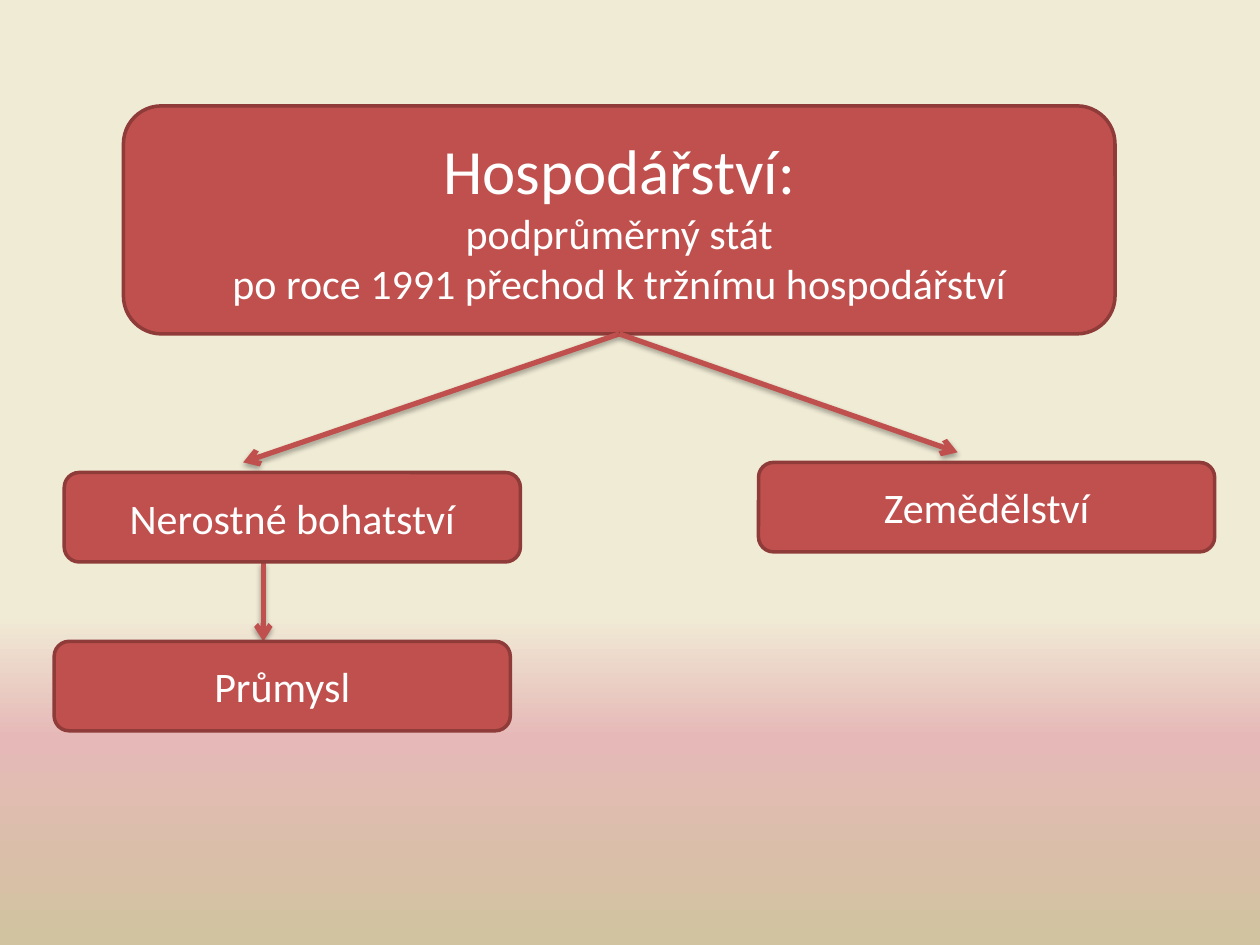
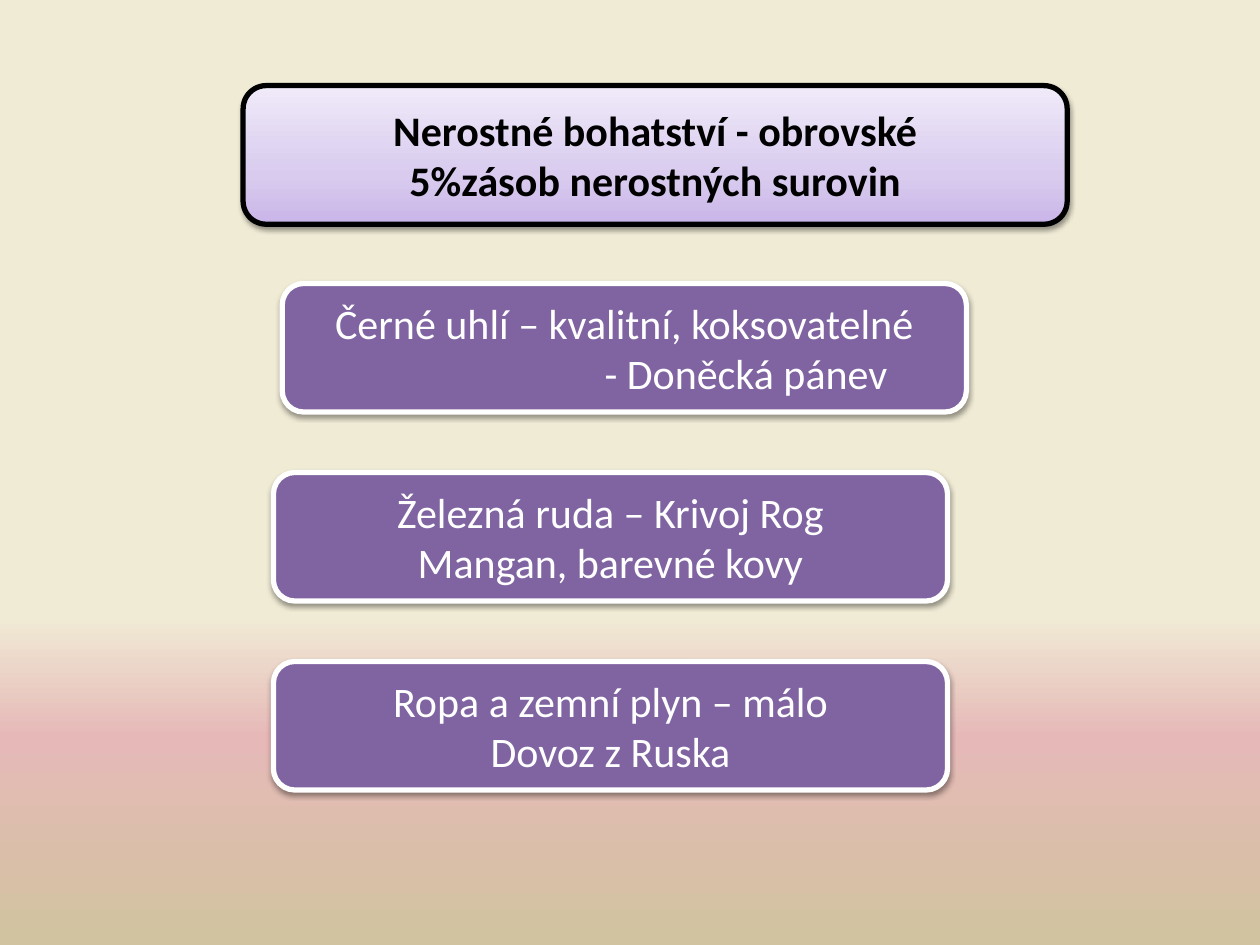
from lxml import etree
from pptx import Presentation
from pptx.dml.color import RGBColor
from pptx.enum.shapes import MSO_CONNECTOR as Connector, MSO_SHAPE as Shape
from pptx.enum.text import MSO_ANCHOR as Anchor, PP_ALIGN as Align
from pptx.oxml.ns import qn
from pptx.util import Inches, Pt

RED = RGBColor(0xC0, 0x50, 0x4D)
DARK_RED = RGBColor(0x8E, 0x3B, 0x39)
PURPLE = RGBColor(0x80, 0x64, 0xA2)
WHITE = RGBColor(0xFF, 0xFF, 0xFF)
BLACK = RGBColor(0x00, 0x00, 0x00)
CREAM = RGBColor(0xF0, 0xEB, 0xD5)
PINK = RGBColor(0xE6, 0xB9, 0xB8)
SAND = RGBColor(0xD1, 0xC3, 0x9F)
LILAC = RGBColor(0xC9, 0xB5, 0xE8)
LIGHT_LILAC = RGBColor(0xD8, 0xCB, 0xEE)
PALE_LILAC = RGBColor(0xF0, 0xEA, 0xF9)

BACKGROUND_STOPS = [(65, CREAM), (78, PINK), (100, SAND)]
HEADING_STOPS = [(0, LILAC), (35, LIGHT_LILAC), (100, PALE_LILAC)]

BODY_FONT = {"name": "Calibri", "size": Pt(24), "bold": False}
LARGE_FONT = {**BODY_FONT, "size": Pt(36)}
BOLD_FONT = {**BODY_FONT, "bold": True}

RED_BOX = {"fill": RED, "line": DARK_RED, "width": 2, "text": WHITE}
PURPLE_BOX = {"fill": PURPLE, "line": WHITE, "width": 3, "text": WHITE,
              "shadow": (38, 1.6)}
LILAC_BOX = {"fill": HEADING_STOPS, "line": BLACK, "width": 3, "text": BLACK,
             "shadow": (38, 1.6)}


def add_color(parent, color, alpha=None):
    """Append an RGB colour, optionally with an opacity in percent."""
    node = etree.SubElement(parent, qn("a:srgbClr"), val=str(color))
    if alpha is not None:
        etree.SubElement(node, qn("a:alpha"), val=str(alpha * 1000))


def paint_gradient(owner, fill, stops, angle):
    """Give a fill the listed gradient stops, turned clockwise by an angle."""
    fill.gradient()
    gradient = next(owner.element.iter(qn("a:gradFill")))
    gradient.clear()
    stop_list = etree.SubElement(gradient, qn("a:gsLst"))
    for position, color in stops:
        stop = etree.SubElement(stop_list, qn("a:gs"), pos=str(position * 1000))
        add_color(stop, color)
    etree.SubElement(gradient, qn("a:lin"), ang=str(angle * 60000), scaled="0")


def set_shadow(shape, shadow=None):
    """Replace the theme shadow with none, or with one of (opacity, distance)."""
    properties = shape.element.find(qn("p:spPr"))
    effects = etree.SubElement(properties, qn("a:effectLst"))
    if shadow:
        opacity, distance = shadow
        outer = etree.SubElement(
            effects, qn("a:outerShdw"), blurRad=str(Pt(3.1)),
            dist=str(Pt(distance)), dir=str(90 * 60000), rotWithShape="0")
        add_color(outer, BLACK, opacity)


def write_line(para, text, color, font):
    """Write one centred line of text."""
    para.alignment = Align.CENTER
    span = para.add_run()
    span.text = text
    span.font.color.rgb = color
    for name, value in font.items():
        setattr(span.font, name, value)


def add_box(page, place, lines, style):
    """Add a rounded box holding (text, font) lines."""
    box = page.shapes.add_shape(
        Shape.ROUNDED_RECTANGLE, *[Inches(length) for length in place])
    if isinstance(style["fill"], list):
        paint_gradient(box, box.fill, style["fill"], 270)
    else:
        box.fill.solid()
        box.fill.fore_color.rgb = style["fill"]
    box.line.color.rgb = style["line"]
    box.line.width = Pt(style["width"])
    set_shadow(box, style.get("shadow"))
    frame = box.text_frame
    frame.word_wrap = True
    frame.vertical_anchor = Anchor.MIDDLE
    for index, (text, font) in enumerate(lines):
        para = frame.add_paragraph() if index else frame.paragraphs[0]
        write_line(para, text, style["text"], font)
    return box


def add_arrow(page, start, end):
    """Add a red arrow between two points."""
    arrow = page.shapes.add_connector(
        Connector.STRAIGHT, *[Inches(length) for length in (*start, *end)])
    arrow.line.color.rgb = RED
    arrow.line.width = Pt(3)
    outline = next(arrow.element.iter(qn("a:ln")))
    etree.SubElement(outline, qn("a:tailEnd"), type="arrow")
    set_shadow(arrow, (35, 1.8))


def build_economy(page):
    """Build the tree of the branches of the economy."""
    left, top, width, height = heading = (0.98, 0.84, 7.87, 1.81)
    add_box(page, heading, [
        ("Hospodářství:", LARGE_FONT),
        ("podprůměrný stát", BODY_FONT),
        ("po roce 1991 přechod k tržnímu hospodářství", BODY_FONT),
    ], RED_BOX)
    root = (left + width / 2, top + height)
    add_arrow(page, root, (1.93, 3.67))
    add_arrow(page, root, (7.6, 3.59))
    add_arrow(page, (2.09, 4.46), (2.09, 5.09))
    branches = [("Zemědělství", 6.02, 3.67), ("Nerostné bohatství", 0.51, 3.75),
                ("Průmysl", 0.43, 5.09)]
    for text, left, top in branches:
        add_box(page, (left, top, 3.62, 0.71), [(text, BODY_FONT)], RED_BOX)


def build_minerals(page):
    """Build the heading and the column of mineral resources."""
    add_box(page, (1.93, 0.68, 6.54, 1.1), [
        ("Nerostné bohatství - obrovské", BOLD_FONT),
        ("5%zásob nerostných surovin", BOLD_FONT),
    ], LILAC_BOX)
    resources = [
        (2.24, 5.43, "Černé uhlí – kvalitní, koksovatelné", "- Doněcká pánev"),
        (2.17, 5.35, "Železná ruda – Krivoj Rog", "Mangan, barevné kovy"),
        (2.17, 5.35, "Ropa a zemní plyn – málo", "Dovoz z Ruska"),
    ]
    boxes = [
        add_box(page, (left, 2.25 + 1.5 * row, width, 1.02),
                [(text, BODY_FONT) for text in lines], PURPLE_BOX)
        for row, (left, width, *lines) in enumerate(resources)
    ]
    coal_basin = boxes[0].text_frame.paragraphs[1]
    coal_basin.alignment = Align.LEFT
    coal_basin._p.get_or_add_pPr().set("marL", str(Inches(2.41)))


def main():
    """Build and save the deck."""
    deck = Presentation()
    deck.slide_width, deck.slide_height = Inches(10), Inches(7.5)
    master = deck.slide_master
    paint_gradient(master, master.background.fill, BACKGROUND_STOPS, 90)
    for build in (build_economy, build_minerals):
        build(deck.slides.add_slide(deck.slide_layouts[6]))
    deck.save("out.pptx")


if __name__ == "__main__":
    main()
